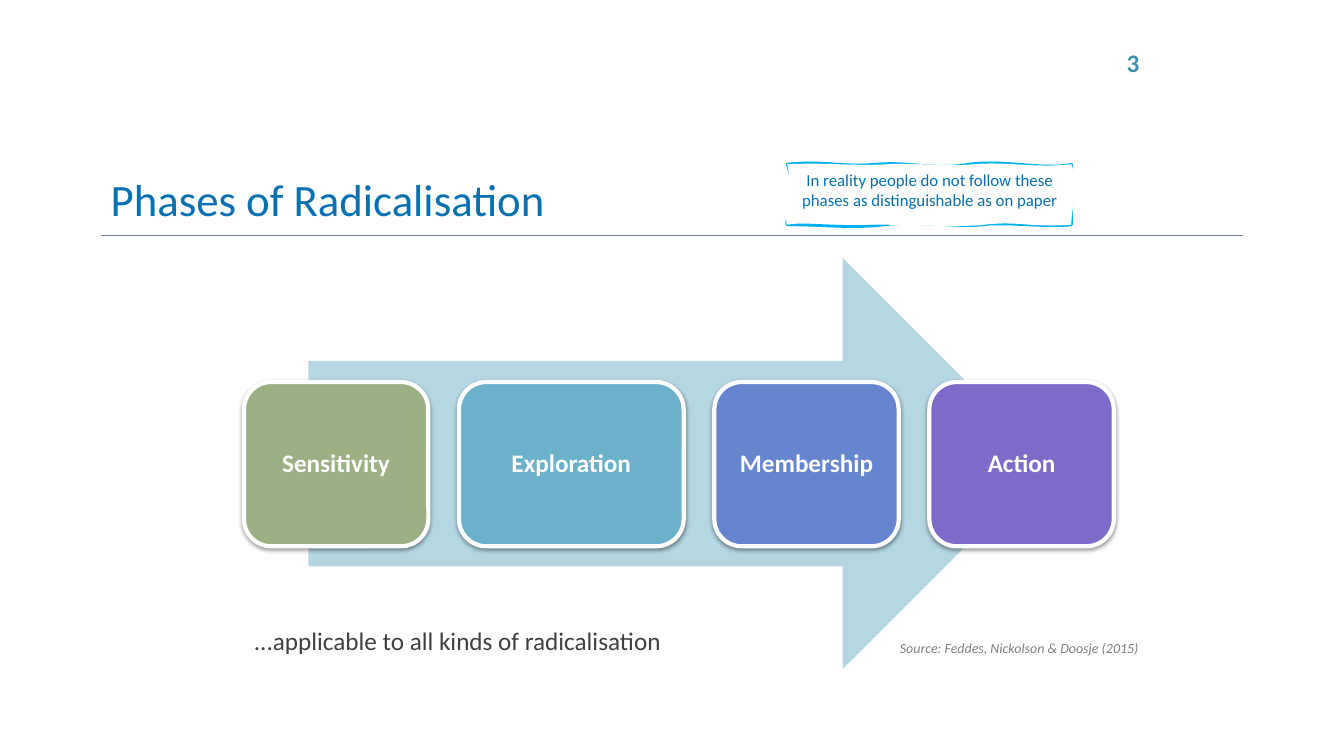
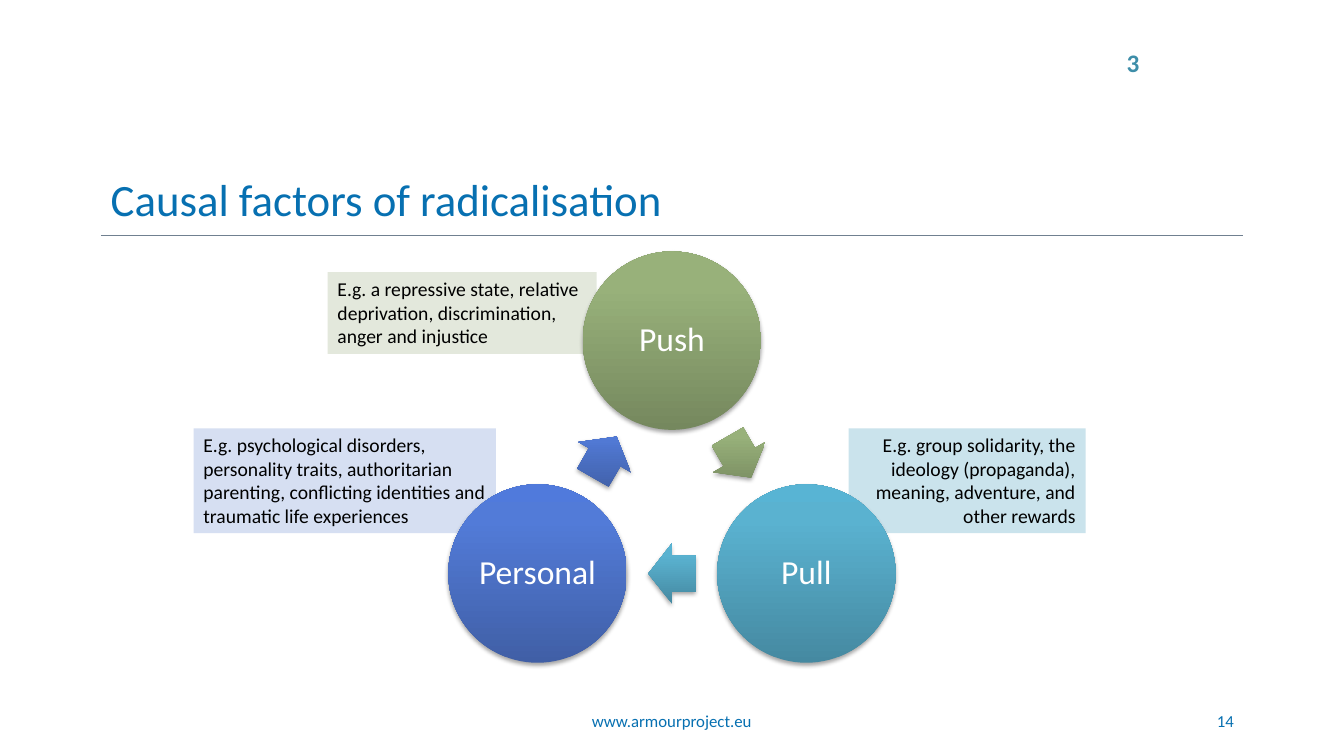
from copy import deepcopy
from math import cos, radians, sin

from lxml import etree
from pptx import Presentation
from pptx.dml.color import RGBColor
from pptx.enum.shapes import MSO_CONNECTOR, MSO_SHAPE
from pptx.enum.text import MSO_ANCHOR as Anchor, PP_ALIGN as Align
from pptx.oxml.ns import qn
from pptx.util import Inches, Pt

FONT = "Calibri"
TITLE_BLUE = RGBColor(0x07, 0x70, 0xB1)
RULE_GREY = RGBColor(0x70, 0x80, 0x90)
CHAPTER_TEAL = RGBColor(0x3E, 0x8E, 0xA9)
FRAME_BLUE = RGBColor(0x00, 0xB0, 0xF0)
WHITE = RGBColor(0xFF, 0xFF, 0xFF)
BLACK = RGBColor(0x00, 0x00, 0x00)
DARK_GREY = RGBColor(0x40, 0x40, 0x40)
MID_GREY = RGBColor(0x80, 0x80, 0x80)
GREEN = RGBColor(0x9C, 0xB0, 0x84)
TEAL = RGBColor(0x6B, 0xB1, 0xC9)
BLUE = RGBColor(0x65, 0x85, 0xCF)
VIOLET = RGBColor(0x7E, 0x6B, 0xC9)
PALE_GREEN = RGBColor(0xE3, 0xE8, 0xDC)
PALE_TEAL = RGBColor(0xCA, 0xE3, 0xEC)
PALE_BLUE = RGBColor(0xD6, 0xDF, 0xF2)
GREEN_SHADES = [RGBColor(0x75, 0x88, 0x5E), RGBColor(0x98, 0xB1, 0x7A), RGBColor(0x99, 0xB3, 0x79)]
TEAL_SHADES = [RGBColor(0x45, 0x89, 0xA1), RGBColor(0x5A, 0xB2, 0xD0), RGBColor(0x58, 0xB4, 0xD4)]
BLUE_SHADES = [RGBColor(0x40, 0x5F, 0xA6), RGBColor(0x52, 0x7B, 0xD8), RGBColor(0x50, 0x7A, 0xDC)]
SLIDE_W = 40 / 3


def write(shape, text, size, color, align=Align.LEFT, anchor=Anchor.TOP,
          bold=False, italic=False, wrap=True):
    frame = shape.text_frame
    frame.word_wrap = wrap
    frame.vertical_anchor = anchor
    frame.text = text
    for paragraph in frame.paragraphs:
        paragraph.alignment = align
        for run in paragraph.runs:
            run.font.name = FONT
            run.font.size = Pt(size)
            run.font.color.rgb = color
            run.font.bold = bold
            run.font.italic = italic
    return frame


def add_shadow(shape, opacity, distance):
    shape.shadow.inherit = False
    effects = shape._element.spPr.find(qn("a:effectLst"))
    shadow = etree.SubElement(effects, qn("a:outerShdw"), blurRad=str(Pt(3.1)),
                              dist=str(Pt(distance)), dir="5400000", rotWithShape="0")
    shade = etree.SubElement(shadow, qn("a:srgbClr"), val="000000")
    etree.SubElement(shade, qn("a:alpha"), val=str(opacity * 1000))


prs = Presentation()
prs.slide_width = Inches(SLIDE_W)
prs.slide_height = Inches(7.5)

# Shared parts: rule, title and chapter number
slides = []
for title in ["Phases of Radicalisation", "Causal factors of radicalisation"]:
    slide = prs.slides.add_slide(prs.slide_layouts[6])
    rule = slide.shapes.add_connector(MSO_CONNECTOR.STRAIGHT, Inches(1), Inches(2.34),
                                      Inches(12.33), Inches(2.34))
    rule.line.color.rgb = RULE_GREY
    rule.line.width = Pt(0.75)
    etree.SubElement(rule._element.spPr, qn("a:effectLst"))
    heading = slide.shapes.add_textbox(Inches(1), Inches(1.59), Inches(11.33), Inches(0.75))
    write(heading, title, 32, TITLE_BLUE, anchor=Anchor.MIDDLE)
    chapter = slide.shapes.add_textbox(Inches(11.08), Inches(0.42), Inches(0.33), Inches(0.4))
    write(chapter, "3", 18, CHAPTER_TEAL, bold=True, wrap=False)
    slides.append(slide)
phases, causes = slides

# Phases: pale arrow behind the four steps
progress = phases.shapes.add_shape(MSO_SHAPE.RIGHT_ARROW, Inches(3.06), Inches(2.56),
                                   Inches(7.34), Inches(4.08))
progress.shadow.inherit = False
progress.fill.solid()
progress.fill.fore_color.rgb = TEAL
progress.line.fill.background()
tint = progress._element.spPr.find(qn("a:solidFill")).find(qn("a:srgbClr"))
etree.SubElement(tint, qn("a:alpha"), val="50000")

steps = [("Sensitivity", GREEN, 1.83), ("Exploration", TEAL, 2.23),
         ("Membership", BLUE, 1.83), ("Action", VIOLET, 1.83)]
left, right = 2.42, 11.05
gap = (right - left - sum(width for _, _, width in steps)) / (len(steps) - 1)
for name, color, width in steps:
    step = phases.shapes.add_shape(MSO_SHAPE.ROUNDED_RECTANGLE, Inches(left), Inches(3.79),
                                   Inches(width), Inches(1.63))
    step.fill.solid()
    step.fill.fore_color.rgb = color
    step.line.color.rgb = WHITE
    step.line.width = Pt(3)
    add_shadow(step, 38, 1.6)
    label = write(step, name, 18, WHITE, Align.CENTER, Anchor.MIDDLE, bold=True)
    label.margin_left = label.margin_right = Inches(0.07)
    label.paragraphs[0].line_spacing = 0.9
    left += width + gap

# Phases: source and remark
source = phases.shapes.add_textbox(Inches(8.83), Inches(6.3), Inches(2.64), Inches(0.27))
write(source, "Source: Feddes, Nickolson & Doosje (2015)", 10, MID_GREY, italic=True, wrap=False)
remark = phases.shapes.add_textbox(Inches(2.42), Inches(6.15), Inches(4.74), Inches(0.4))
write(remark, "...applicable to all kinds of radicalisation", 18, DARK_GREY)

# Phases: hand-drawn note, a wavy stroke partly covered by a wavy white sheet.
# Each curve holds two control points and an end point.
NOTE_X, NOTE_Y, NOTE_W, NOTE_H = 7.81, 1.63, 2.83, 0.6
STROKE_CURVES = [
    (8.18, 1.59, 8.34, 1.66, 8.69, 1.63), (9.04, 1.6, 9.25, 1.69, 9.61, 1.63),
    (9.96, 1.58, 10.36, 1.69, 10.63, 1.63), (10.65, 1.93, 10.63, 1.94, 10.63, 2.23),
    (10.39, 2.26, 9.98, 2.2, 9.75, 2.23), (9.51, 2.26, 9.11, 2.19, 8.78, 2.23),
    (8.45, 2.27, 8.18, 2.23, 7.81, 2.23), (7.76, 1.94, 7.92, 1.91, 7.81, 1.63)]
SHEET_CURVES = [
    (8.18, 1.61, 8.47, 1.65, 8.8, 1.63), (9.14, 1.61, 9.32, 1.66, 9.66, 1.63),
    (10, 1.6, 10.25, 1.67, 10.63, 1.63), (10.72, 1.87, 10.63, 2.01, 10.63, 2.23),
    (10.22, 2.26, 10.1, 2.19, 9.77, 2.23), (9.45, 2.26, 9.17, 2.23, 8.78, 2.23),
    (8.38, 2.23, 8.15, 2.18, 7.81, 2.23), (7.7, 1.97, 7.88, 1.87, 7.81, 1.63)]
outline = phases.shapes.build_freeform(Inches(NOTE_X), Inches(NOTE_Y))
outline.add_line_segments([(Inches(NOTE_X + NOTE_W), Inches(NOTE_Y)),
                           (Inches(NOTE_X + NOTE_W), Inches(NOTE_Y + NOTE_H)),
                           (Inches(NOTE_X), Inches(NOTE_Y + NOTE_H))])
note = outline.convert_to_shape()
outlines = note._element.spPr.find(qn("a:custGeom")).find(qn("a:pathLst"))
outlines.remove(outlines[0])
for curves, hidden in [(STROKE_CURVES, {"fill": "none"}), (SHEET_CURVES, {"stroke": "0"})]:
    edge = etree.SubElement(outlines, qn("a:path"), w=str(Inches(NOTE_W)),
                            h=str(Inches(NOTE_H)), **hidden)
    segments = [("a:moveTo", (NOTE_X, NOTE_Y))] + [("a:cubicBezTo", curve) for curve in curves]
    for tag, coordinates in segments:
        segment = etree.SubElement(edge, qn(tag))
        for x, y in zip(coordinates[::2], coordinates[1::2]):
            etree.SubElement(segment, qn("a:pt"), x=str(Inches(x - NOTE_X)),
                             y=str(Inches(y - NOTE_Y)))
    etree.SubElement(edge, qn("a:close"))
note.shadow.inherit = False
note.fill.solid()
note.fill.fore_color.rgb = WHITE
note.line.color.rgb = FRAME_BLUE
note.line.width = Pt(2)
write(note, "In reality people do not follow these phases as distinguishable as on paper",
      12, TITLE_BLUE, Align.CENTER)

# Causes: examples beside the circles
for text, color, x, y, width, height, align in [
        ("E.g. psychological disorders, personality traits, authoritarian parenting, "
         "conflicting identities and traumatic life experiences",
         PALE_BLUE, 1.92, 4.25, 3, 1.04, Align.LEFT),
        ("E.g. a repressive state, relative deprivation, discrimination, \vanger and injustice",
         PALE_GREEN, 3.25, 2.7, 2.67, 0.81, Align.LEFT),
        ("E.g. group solidarity, the ideology (propaganda), meaning, adventure, "
         "and other rewards",
         PALE_TEAL, 8.42, 4.25, 2.35, 1.04, Align.RIGHT)]:
    example = causes.shapes.add_shape(MSO_SHAPE.RECTANGLE, Inches(x), Inches(y),
                                      Inches(width), Inches(height))
    example.shadow.inherit = False
    example.fill.solid()
    example.fill.fore_color.rgb = color
    example.line.fill.background()
    write(example, text, 14, BLACK, align)

# Causes: cycle of circles, each followed clockwise by its arrow
CENTER_X, CENTER_Y, RADIUS = SLIDE_W / 2, 4.92, 1.54
CIRCLE, ARROW_W, ARROW_H = 1.77, 0.47, 0.6
for i, (name, shades) in enumerate([("Push", GREEN_SHADES), ("Pull", TEAL_SHADES),
                                    ("Personal", BLUE_SHADES)]):
    angle = radians(120 * i)
    x = CENTER_X + RADIUS * sin(angle)
    y = CENTER_Y - RADIUS * cos(angle)
    factor = causes.shapes.add_shape(MSO_SHAPE.OVAL, Inches(x - CIRCLE / 2),
                                     Inches(y - CIRCLE / 2), Inches(CIRCLE), Inches(CIRCLE))
    label = write(factor, name, 24, WHITE, Align.CENTER, Anchor.MIDDLE)
    label.margin_left = label.margin_right = Inches(0.03)
    label.paragraphs[0].line_spacing = 0.9

    middle = angle + radians(60)
    x = CENTER_X + RADIUS / 2 * sin(middle)
    y = CENTER_Y - RADIUS / 2 * cos(middle)
    arrow = causes.shapes.add_shape(MSO_SHAPE.RIGHT_ARROW, Inches(x - ARROW_W / 2),
                                    Inches(y - ARROW_H / 2), Inches(ARROW_W), Inches(ARROW_H))
    arrow.adjustments[0] = 0.6
    arrow.adjustments[1] = 0.5
    arrow.rotation = 60 + 120 * i

    for part in (factor, arrow):
        part.line.fill.background()
        part.fill.gradient()
        part.fill.gradient_angle = 90
        gradient = part._element.spPr.find(qn("a:gradFill"))
        gradient.set("rotWithShape", "0")
        stop_list = gradient.find(qn("a:gsLst"))
        stop_list.append(deepcopy(stop_list[-1]))
        for stop, position, shade in zip(part.fill.gradient_stops, (0, 0.8, 1), shades):
            stop.position = position
            stop.color.rgb = shade
        add_shadow(part, 35, 1.8)

# Causes: footer
for text, x, width, align in [("www.armourproject.eu", 5.11, 3.11, Align.CENTER),
                              ("14", 9.56, 2.78, Align.RIGHT)]:
    footer = causes.shapes.add_textbox(Inches(x), Inches(6.95), Inches(width), Inches(0.4))
    write(footer, text, 12, TITLE_BLUE, align, Anchor.MIDDLE)

prs.save("out.pptx")
